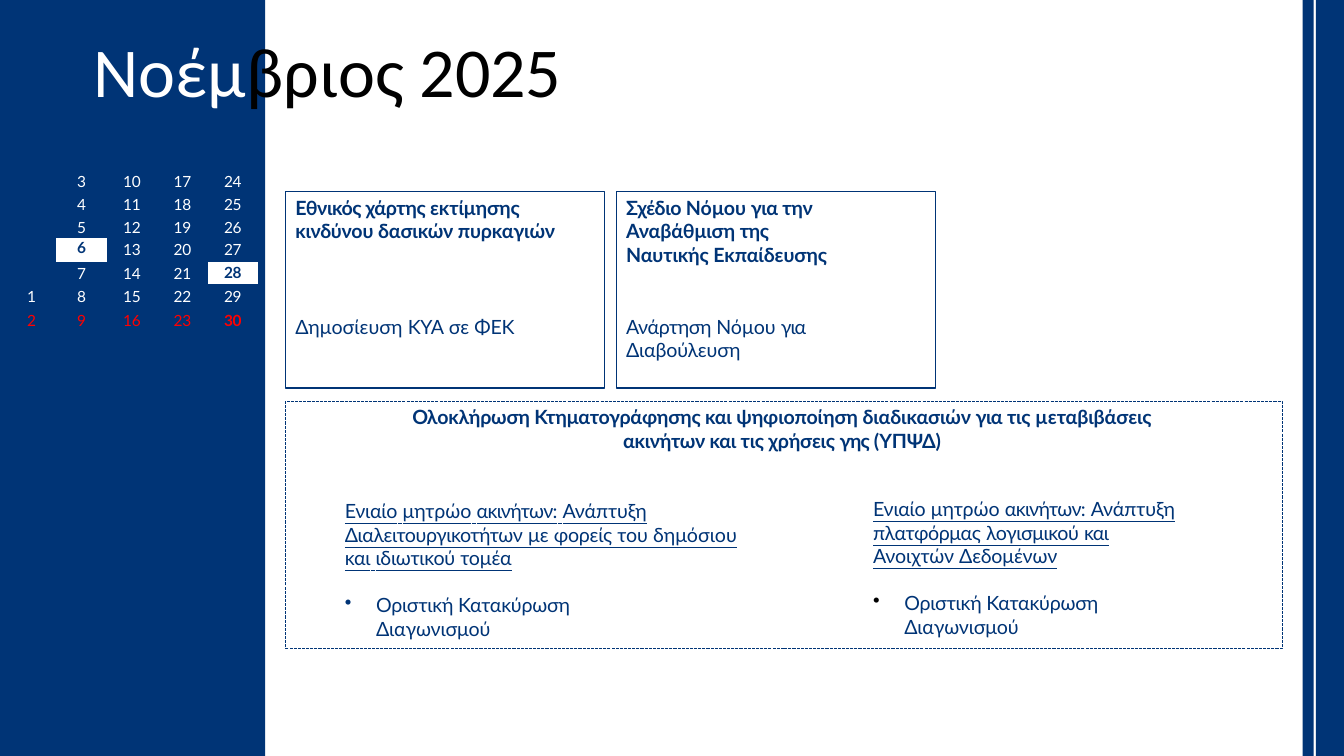
from dataclasses import dataclass

from lxml import etree
from pptx import Presentation
from pptx import util as u
from pptx.dml.color import RGBColor
from pptx.enum import dml, shapes, text
from pptx.oxml.ns import qn


@dataclass(frozen=True)
class Theme:
    navy: str = "003476"
    white: str = "FFFFFF"
    black: str = "000000"
    red: str = "FF0000"
    body_font: str = "Lato"
    title_font: str = "Calibri"
    title: float = 50
    body: float = 14
    day: float = 11
    outline: float = 0.75


@dataclass(frozen=True)
class Box:
    x: float
    y: float
    w: float
    h: float

    def area(self, x, y, w, h):
        return Box(self.x + self.w * x / 100, self.y + self.h * y / 100,
                   self.w * w / 100, self.h * h / 100)

    def emu(self):
        return [u.Inches(side) for side in (self.x, self.y, self.w, self.h)]


THEME = Theme()
PAGE = Box(0, 0, 13.33, 7.5)
NO_GRID_STYLE = "{2D5ABB26-0587-4C30-8999-92F81FD0307C}"
WORD_GAP = -1


def rgb(color):
    return RGBColor.from_string(color)


def add_run(paragraph, words, spacing=0, size=THEME.body, color=THEME.navy,
            font=THEME.body_font, bold=False, underline=False):
    run = paragraph.add_run()
    run.text = words
    run.font.size = u.Pt(size)
    run.font.name = font
    run.font.bold = bold
    run.font.underline = underline
    run.font.color.rgb = rgb(color)
    run.font._element.set("spc", str(round(spacing * 100)))


def layout(paragraph, before=0, left=0, first=0, right=0):
    paragraph.alignment = text.PP_ALIGN.LEFT
    paragraph.space_before = u.Pt(before)
    properties = paragraph._p.get_or_add_pPr()
    for name, inches in (("marL", left), ("marR", right), ("indent", first)):
        properties.set(name, str(u.Inches(inches)))


def set_frame(frame, top, anchor=text.MSO_ANCHOR.TOP):
    frame.word_wrap = True
    frame.vertical_anchor = anchor
    frame.margin_left = frame.margin_right = frame.margin_bottom = 0
    frame.margin_top = u.Inches(top)
    return frame


def add_text(slide, box, anchor=text.MSO_ANCHOR.TOP):
    return set_frame(slide.shapes.add_textbox(*box.emu()).text_frame, 0.01, anchor)


def add_panel(slide, box, fill=None, dash=None):
    panel = slide.shapes.add_shape(shapes.MSO_SHAPE.RECTANGLE, *box.emu())
    panel.shadow.inherit = False
    if fill:
        panel.fill.solid()
        panel.fill.fore_color.rgb = rgb(fill)
        panel.line.fill.background()
    else:
        panel.fill.background()
        panel.line.color.rgb = rgb(THEME.navy)
        panel.line.width = u.Pt(THEME.outline)
        if dash:
            panel.line.dash_style = dash
    return panel


def add_month(slide, box):
    paragraph = add_text(slide, box, text.MSO_ANCHOR.MIDDLE).paragraphs[0]
    layout(paragraph, before=1.1, left=0.01)
    for words, color, spacing in (("Νοέμ", THEME.white, 0),
                                  ("βριος ", THEME.black, 0),
                                  ("2025", THEME.black, -0.2)):
        add_run(paragraph, words, spacing, THEME.title, color, THEME.title_font)


def add_calendar(slide, box):
    columns = (0.32, 0.5, 0.5, 0.5, 0.5)
    weekdays = ((0.22, 0.01, 0.6), (0.23, 0.02, 1.2), (0.2, 0.02, 1.2),
                (0.24, 0.04, 3), (0.22, 0.03, 2.5), (0.25, 0.04, 3),
                (0.21, 0.03, 1.9))
    deadlines = (6, 28)
    sunday = len(weekdays) - 1
    grid = slide.shapes.add_table(len(weekdays), len(columns), *box.emu()).table
    grid.first_row = grid.horz_banding = False
    grid._tbl.tblPr.find(qn("a:tableStyleId")).text = NO_GRID_STYLE
    for column, width in zip(grid.columns, columns):
        column.width = u.Inches(width)
    for weekday, (height, top, before) in enumerate(weekdays):
        grid.rows[weekday].height = u.Inches(height)
        for week in range(len(columns)):
            day = 7 * week + weekday - 4
            marked = day in deadlines
            cell = grid.cell(weekday, week)
            cell.fill.solid()
            cell.fill.fore_color.rgb = rgb(THEME.white if marked else THEME.navy)
            cell.margin_left = cell.margin_right = cell.margin_bottom = 0
            cell.margin_top = u.Inches(0.02 if marked else top)
            paragraph = cell.text_frame.paragraphs[0]
            if day < 1:
                etree.SubElement(paragraph._p, qn("a:endParaRPr"), sz="400")
                continue
            layout(paragraph, 1.8 if marked else before, 0 if week else 0.03)
            if week:
                paragraph.alignment = text.PP_ALIGN.CENTER
            paragraph.line_spacing = u.Pt(12.5)
            color = (THEME.navy if marked else
                     THEME.red if weekday == sunday else THEME.white)
            add_run(paragraph, str(day), -0.5 if day < 10 else -0.2, THEME.day,
                    color, bold=marked or day == 30)


def add_card(slide, box, heading, action, action_gap, right):
    frame = set_frame(add_panel(slide, box).text_frame, 0.04)
    entries = [(runs, True, 0 if i else 2.6) for i, runs in enumerate(heading)]
    entries.append((action, False, action_gap))
    for i, (runs, bold, before) in enumerate(entries):
        paragraph = frame.add_paragraph() if i else frame.paragraphs[0]
        layout(paragraph, before, left=0.1, right=right)
        for words, spacing in runs:
            add_run(paragraph, words, spacing, bold=bold)


def add_project(slide, box, heading, task_width, bullet):
    frame = add_text(slide, box.area(0, 0, 100, 61))
    for i, line in enumerate(heading):
        paragraph = frame.add_paragraph() if i else frame.paragraphs[0]
        layout(paragraph, 0.1 if i else 1, right=0.05)
        for j, (word, spacing) in enumerate(line):
            if j:
                add_run(paragraph, " ", WORD_GAP, underline=True)
            add_run(paragraph, word, spacing, underline=True)
    task = add_text(slide, box.area(0, 78.5, task_width, 22)).paragraphs[0]
    layout(task, before=1, left=0.31, first=-0.31, right=0.3)
    properties = task._p.get_or_add_pPr()
    tint = etree.SubElement(properties, qn("a:buClr"))
    etree.SubElement(tint, qn("a:srgbClr"), val=bullet)
    etree.SubElement(properties, qn("a:buChar"), char="•")
    add_run(task, "Οριστική Κατακύρωση ", -0.2)
    add_run(task, "Διαγωνισμού", -0.1)


def add_land_registry(slide, box):
    add_panel(slide, box, dash=dml.MSO_LINE.SQUARE_DOT)
    heading = add_text(slide, box.area(12.74, 1.2, 74.72, 20.4)).paragraphs[0]
    layout(heading, before=1, left=2.09, first=-2.09)
    for words, spacing in (("Ολοκλήρωση Κτηματογράφησης και ", -0.2),
                           ("ψηφιοποίηση διαδικασιών ", -0.1), ("για ", -0.4),
                           ("τις ", -0.2), ("µεταβιβάσεις ", -0.1),
                           ("ακινήτων και τις χρήσεις ", -0.2), ("γης ", -0.6),
                           ("(ΥΠΨΔ)", -0.1)):
        add_run(heading, words, spacing, bold=True)
    registry = [("Ενιαίο", -0.2), ("μητρώο", 0), ("ακινήτων:", -0.5),
                ("Ανάπτυξη", -0.1)]
    interoperability = [("Διαλειτουργικοτήτων", -0.3), ("με", 0), ("φορείς", -0.2),
                        ("του", 0), ("δημόσιου", 0), ("και", -0.2),
                        ("ιδιωτικού", -0.2), ("τομέα", -0.1)]
    platform = [("πλατφόρμας", -0.3), ("λογισμικού", -0.3), ("και", -0.5),
                ("Ανοιχτών", -0.1), ("Δεδομένων", -0.1)]
    add_project(slide, box.area(5.97, 39.2, 41.96, 48.5),
                [registry, interoperability], 81, THEME.navy)
    add_project(slide, box.area(58.95, 38.4, 31.65, 48.5),
                [registry + platform], 107, THEME.black)


def add_cards(slide, box):
    fire_map = ([[("Εθνικός χάρτης ", -0.3), ("εκτίμησης", -0.1)],
                 [("κινδύνου ", -0.2), ("δασικών πυρκαγιών", -0.1)]],
                [("Δημοσίευση ", 0), ("ΚΥΑ ", -0.3), ("σε ", 0), ("ΦΕΚ", -0.2)],
                51.5, 0)
    naval_bill = ([[("Σχέδιο ", -0.3), ("Νόμου ", 0), ("για ", -0.4), ("την", -0.2)],
                   [("Αναβάθμιση ", -0.1), ("της ", -0.4),
                    ("Ναυτικής Εκπαίδευσης", -0.1)]],
                  [("Ανάρτηση ", -0.3), ("Νόμου ", 0), ("για ", -0.7),
                   ("Διαβούλευση", -0.1)],
                  34.5, 0.9)
    for i, card in enumerate((fire_map, naval_bill)):
        add_card(slide, box.area(50.85 * i, 0, 49.15, 100), *card)


def add_bands(slide, box):
    for left, width in ((0, 19.73), (96.92, 0.83), (97.9, 2.1)):
        add_panel(slide, box.area(left, 0, width, 100), THEME.navy)


def main():
    deck = Presentation()
    deck.slide_width, deck.slide_height = PAGE.emu()[2:]
    slide = deck.slides.add_slide(deck.slide_layouts[6])
    add_bands(slide, PAGE)
    add_calendar(slide, PAGE.area(1.8, 22.8, 17.4, 20.93))
    add_month(slide, PAGE.area(6.9, 3.33, 39.46, 11.47))
    add_cards(slide, PAGE.area(21.23, 25.33, 48.39, 26))
    add_land_registry(slide, PAGE.area(21.23, 53.07, 74.19, 32.7))
    deck.save("out.pptx")


if __name__ == "__main__":
    main()
